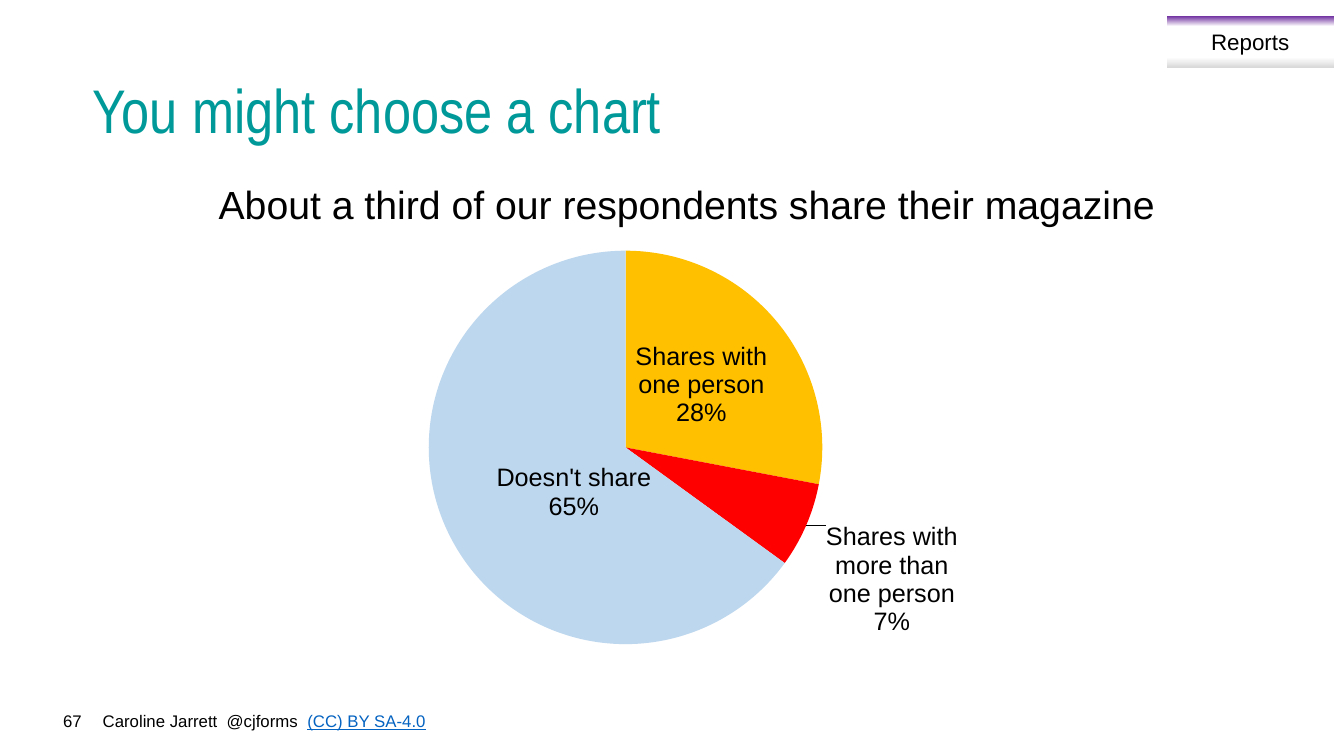
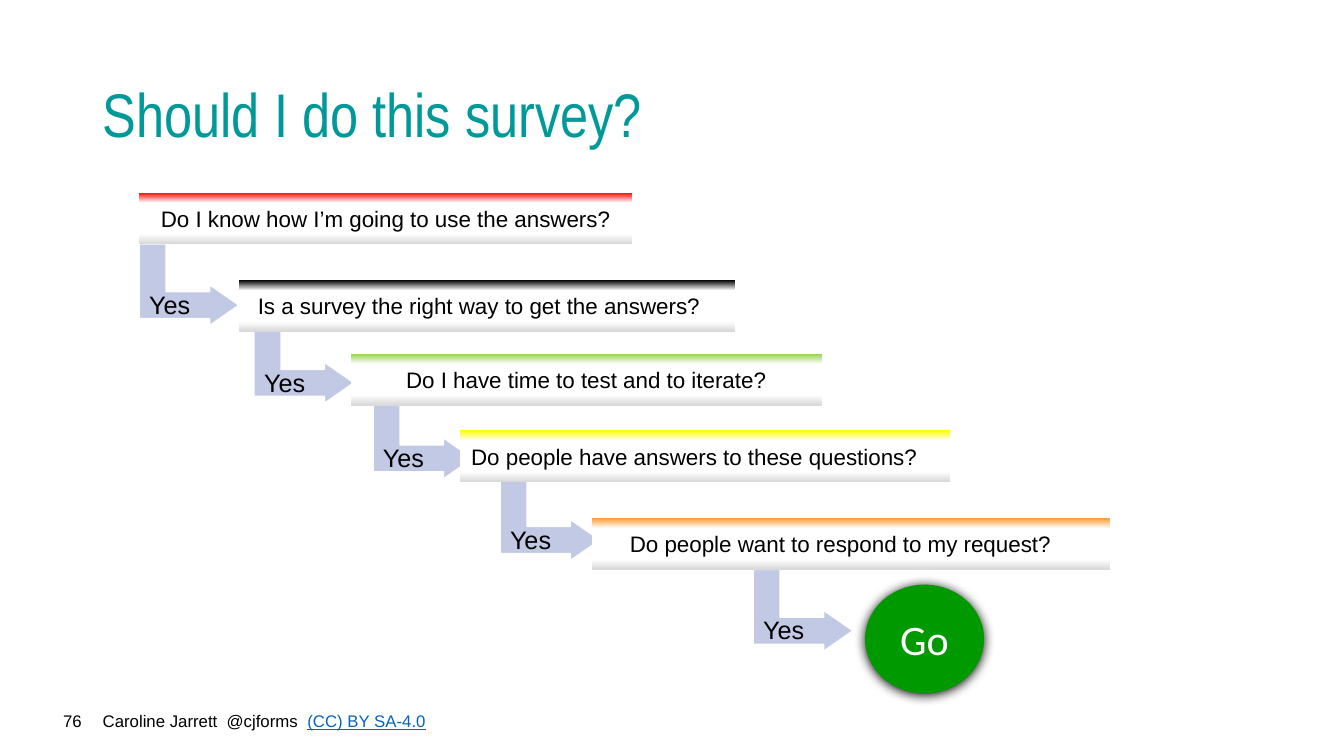
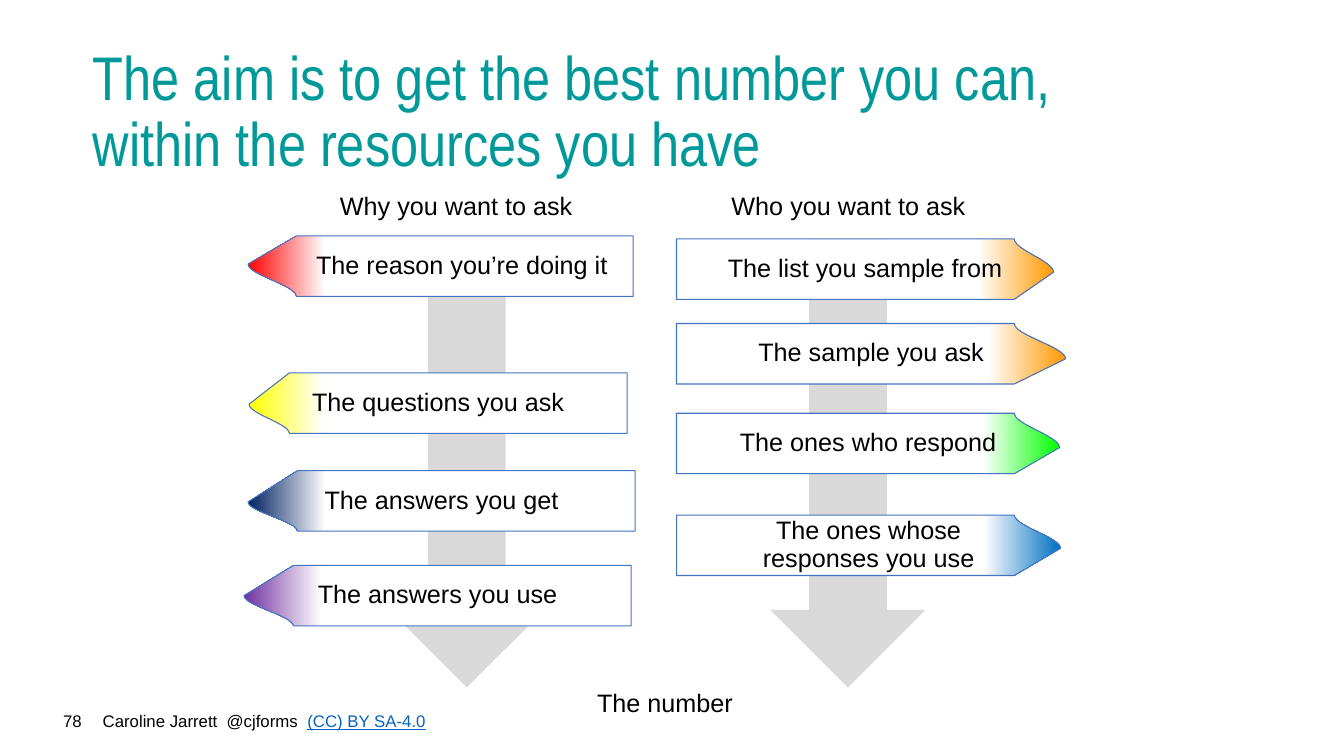
from lxml import etree
from pptx import Presentation
from pptx.chart.data import CategoryChartData
from pptx.dml.color import RGBColor
from pptx.enum.chart import XL_CHART_TYPE, XL_LABEL_POSITION
from pptx.enum.shapes import MSO_SHAPE
from pptx.enum.text import MSO_ANCHOR, MSO_AUTO_SIZE, PP_ALIGN
from pptx.oxml.ns import qn
from pptx.util import Inches, Pt

LEFT, CENTER, RIGHT = PP_ALIGN.LEFT, PP_ALIGN.CENTER, PP_ALIGN.RIGHT
TOP, MIDDLE = MSO_ANCHOR.TOP, MSO_ANCHOR.MIDDLE
RECTANGLE, ELLIPSE = MSO_SHAPE.RECTANGLE, MSO_SHAPE.OVAL
BENT_ARROW, DOWN_ARROW = MSO_SHAPE.BENT_UP_ARROW, MSO_SHAPE.DOWN_ARROW
LABEL_CENTER, LABEL_OUTSIDE = XL_LABEL_POSITION.CENTER, XL_LABEL_POSITION.OUTSIDE_END
PIE = XL_CHART_TYPE.PIE
NO_AUTOFIT = MSO_AUTO_SIZE.NONE


class Theme:
    body_font = "Arial"
    title_font = "Arial Narrow"
    button_font = "Calibri"
    title_size, button_size, subtitle_size = 44, 30, 28
    body_size, box_size, footer_size = 18, 16, 12
    text, title, link, white = "000000", "009999", "0563C1", "FFFFFF"
    step_arrow, down_arrow, box_edge = "C1C9E4", "D9D9D9", "D9D9D9"
    banner_line, button = "4472C4", "009900"
    purple, red, black, green = "7030A0", "FF0000", "000000", "92D050"
    yellow, orange, amber, lime = "FFFF00", "FF9933", "FF9900", "00FF00"
    navy, blue = "002060", "0070C0"
    slices = ("FFC000", "FF0000", "BDD7EE")


def write_text(shape, text, size=Theme.body_size, font=Theme.body_font, color=Theme.text,
               align=LEFT, anchor=TOP, spacing=1.0, wrap=True, margins=(0.1, 0.05, 0.1, 0.05)):
    frame = shape.text_frame
    frame.auto_size = NO_AUTOFIT
    frame.word_wrap = wrap
    frame.vertical_anchor = anchor
    frame.margin_left, frame.margin_top, frame.margin_right, frame.margin_bottom = map(Inches, margins)
    frame.text = text
    paragraph = frame.paragraphs[0]
    paragraph.alignment = align
    paragraph.line_spacing = spacing
    for run in paragraph.runs:
        run.font.size = Pt(size)
        run.font.name = font
        run.font.color.rgb = RGBColor.from_string(color)
    return paragraph


def paint(shape, color=None, stops=(), angle=0, line=None, line_width=1):
    shape.shadow.inherit = False
    if stops:
        shape.fill.gradient()
        shape.fill.gradient_angle = angle
        stop_list = shape._element.spPr.find(qn("a:gradFill")).find(qn("a:gsLst"))
        for stop in list(stop_list):
            stop_list.remove(stop)
        for percent, stop_color in stops:
            stop = etree.SubElement(stop_list, qn("a:gs"), pos=str(percent * 1000))
            etree.SubElement(stop, qn("a:srgbClr"), val=stop_color)
    else:
        shape.fill.solid()
        shape.fill.fore_color.rgb = RGBColor.from_string(color)
    if line:
        shape.line.color.rgb = RGBColor.from_string(line)
        shape.line.width = Pt(line_width)
    else:
        shape.line.fill.background()


presentation = Presentation()
presentation.slide_width = Inches(13.33)
presentation.slide_height = Inches(7.5)

pages = [
    ("67", "You might choose a chart", (0.82, 0.4, 11.6, 1.45)),
    ("76", "Should I do this survey?", (0.92, 0.44, 11.5, 1.45)),
    ("78", "The aim is to get the best number you can,\vwithin the resources you have",
     (0.82, 0.4, 11.6, 1.45)),
]
slides = []
for number, title_text, title_box in pages:
    slide = presentation.slides.add_slide(presentation.slide_layouts[5])
    title = slide.shapes.title
    title.left, title.top, title.width, title.height = map(Inches, title_box)
    write_text(title, title_text, size=Theme.title_size, font=Theme.title_font,
               color=Theme.title, anchor=MIDDLE, spacing=0.9)
    footer = slide.shapes.add_textbox(Inches(0.92), Inches(7), Inches(5.71), Inches(0.3))
    paragraph = write_text(footer, "Caroline Jarrett  @cjforms  ", size=Theme.footer_size)
    licence = paragraph.add_run()
    licence.text = "(CC) BY SA-4.0"
    licence.font.size = Pt(Theme.footer_size)
    licence.font.name = Theme.body_font
    licence.font.underline = True
    licence.font.color.rgb = RGBColor.from_string(Theme.link)
    page_number = slide.shapes.add_textbox(Inches(-0.25), Inches(7), Inches(1.16), Inches(0.3))
    write_text(page_number, number, size=Theme.footer_size, align=RIGHT)
    slides.append(slide)
chart_slide, steps_slide, aim_slide = slides

subtitle = chart_slide.shapes.add_textbox(Inches(2.07), Inches(1.74), Inches(9.81), Inches(0.57))
write_text(subtitle, "About a third of our respondents share their magazine", size=Theme.subtitle_size)

chart_data = CategoryChartData()
chart_data.categories = ["Shares with one other person", "Shares with more than one person",
                         "Doesn't share"]
chart_data.add_series("Series 1", (28, 7, 65))
chart = chart_slide.shapes.add_chart(PIE, Inches(2.88), Inches(1.93), Inches(7.15), Inches(5.07),
                                     chart_data).chart
chart.has_title = False
chart.has_legend = False
chart.font.size = Pt(Theme.body_size)
chart.font.name = Theme.body_font
chart.font.color.rgb = RGBColor.from_string(Theme.text)
points = chart.plots[0].series[0].points
label_positions = (LABEL_CENTER, LABEL_OUTSIDE, LABEL_CENTER)
for index, (color, position) in enumerate(zip(Theme.slices, label_positions)):
    point = points[index]
    point.format.fill.solid()
    point.format.fill.fore_color.rgb = RGBColor.from_string(color)
    label = point.data_label
    label_fonts = [label.font]
    if index == 0:
        label.text_frame.text = "Shares with one person\n28%"
        label_fonts = [run.font for paragraph in label.text_frame.paragraphs for run in paragraph.runs]
    for font in label_fonts:
        font.size = Pt(Theme.body_size)
        font.name = Theme.body_font
        font.color.rgb = RGBColor.from_string(Theme.text)
    label.position = position

for body in chart.element.xpath("//c:dLbl//a:bodyPr"):
    body.set("wrap", "square")
label_elements = chart.element.xpath("//c:dLbl")
for label_element in label_elements[1:]:
    for name, value in (("showVal", "0"), ("showCatName", "1"), ("showPercent", "1")):
        label_element.find(qn("c:" + name)).set("val", value)
    etree.SubElement(label_element, qn("c:separator")).text = "\n"

plot_area = chart.element.xpath("//c:plotArea")[0]
for old_layout in plot_area.findall(qn("c:layout")):
    plot_area.remove(old_layout)
layouts = [
    (plot_area, 0, [("layoutTarget", "inner"), ("xMode", "edge"), ("yMode", "edge"),
                    ("x", "0.19"), ("y", "0.11"), ("w", "0.55"), ("h", "0.77")]),
    (label_elements[1], 1, [("x", "0.02"), ("y", "-0.01")]),
    (label_elements[2], 1, [("x", "0.05"), ("y", "0")]),
]
for parent, position, settings in layouts:
    layout = etree.Element(qn("c:layout"))
    manual = etree.SubElement(layout, qn("c:manualLayout"))
    for name, value in settings:
        etree.SubElement(manual, qn("c:" + name), val=value)
    parent.insert(position, layout)

for left, top in ((5.05, 4.66), (3.79, 3.85), (1.47, 2.33), (2.61, 3.1), (7.56, 5.56)):
    arrow = steps_slide.shapes.add_shape(BENT_ARROW, Inches(left), Inches(top), Inches(0.81), Inches(0.99))
    arrow.rotation = 90
    for index, value in enumerate((0.33, 0.25, 0.36)):
        arrow.adjustments[index] = value
    paint(arrow, Theme.step_arrow, line=Theme.white)
    answer = steps_slide.shapes.add_textbox(Inches(left - 0.09), Inches(top + 0.49),
                                            Inches(0.61), Inches(0.4))
    write_text(answer, "Yes", wrap=False)

go_button = steps_slide.shapes.add_shape(ELLIPSE, Inches(8.58), Inches(5.8), Inches(1.18), Inches(1.08))
paint(go_button, Theme.button)
write_text(go_button, "Go", size=Theme.button_size, font=Theme.button_font, color=Theme.white,
           align=CENTER, anchor=MIDDLE)
effects = go_button._element.spPr.find(qn("a:effectLst"))
shadow = etree.SubElement(effects, qn("a:outerShdw"), blurRad=str(Pt(8.5)), dist=str(Pt(1)),
                          dir="5400000", algn="ctr", rotWithShape="0")
etree.SubElement(shadow, qn("a:srgbClr"), val=Theme.black)

boxes = [
    (chart_slide, "Reports", Theme.purple, 11.57, 0.16, 1.66, 0.05),
    (steps_slide, "Do I know how I’m going to use the answers?", Theme.red, 1.38, 1.91, 4.89, 0.05),
    (steps_slide, "Do people want to respond to my request?", Theme.orange, 5.87, 5.14, 5.14, 0.26),
    (steps_slide, "Do people have answers to these questions?", Theme.yellow, 4.56, 4.27, 4.86, 0.26),
    (steps_slide, "Do I have time to test and to iterate?", Theme.green, 3.48, 3.51, 4.67, 0.05),
    (steps_slide, "Is a survey the right way to get the answers?", Theme.black, 2.37, 2.78, 4.92, 0.21),
]
for slide, text, color, left, top, width, right_margin in boxes:
    box = slide.shapes.add_shape(RECTANGLE, Inches(left), Inches(top), Inches(width), Inches(0.51))
    paint(box, stops=((0, color), (20, Theme.white), (80, Theme.white), (100, Theme.box_edge)), angle=270)
    write_text(box, text, size=Theme.box_size, align=CENTER, anchor=MIDDLE,
               margins=(0.05, 0.04, right_margin, 0.04))

banner_margins = (0.03, 0.03, 0.03, 0.03)
for text, left, top, width, height in (
    ("Why you want to ask", 2.79, 1.77, 3.47, 0.57),
    ("Who you want to ask", 7.16, 1.77, 2.51, 0.57),
    ("The number", 5.34, 6.69, 2.51, 0.6),
):
    caption = aim_slide.shapes.add_textbox(Inches(left), Inches(top), Inches(width), Inches(height))
    write_text(caption, text, align=CENTER, anchor=MIDDLE, spacing=0.9, margins=banner_margins)

for left in (3.86, 7.64):
    arrow = aim_slide.shapes.add_shape(DOWN_ARROW, Inches(left), Inches(2.37), Inches(1.54), Inches(4.45))
    paint(arrow, Theme.down_arrow)

banner_height = 0.6
curve_steps = 12
banners = [
    ("The reason you’re doing it", Theme.red, 6.28, 2.94, 2.46, 2.34, 2.62, 0.45),
    ("The questions you ask", Theme.yellow, 6.22, 2.87, 2.47, 3.7, 4.01, 0.03),
    ("The answers you get", Theme.navy, 6.3, 2.95, 2.46, 4.67, 4.98, 0.03),
    ("The answers you use", Theme.purple, 6.26, 2.91, 2.42, 5.61, 5.91, 0.03),
    ("The list you sample from", Theme.amber, 6.71, 10.06, 10.45, 2.37, 2.7, 0.03),
    ("The sample you ask", Theme.amber, 6.71, 10.06, 10.57, 3.21, 3.56, 0.03),
    ("The ones who respond", Theme.lime, 6.71, 10.06, 10.51, 4.1, 4.44, 0.03),
    ("The ones whose\vresponses you use", Theme.blue, 6.71, 10.06, 10.52, 5.11, 5.44, 0.03),
]
for text, color, flat_x, shoulder_x, tip_x, top, tip_y, left_margin in banners:
    points_left = tip_x < flat_x
    straight_y, curve_y = (top, top + banner_height) if points_left else (top + banner_height, top)
    outline = [(shoulder_x, straight_y), (flat_x, straight_y), (flat_x, curve_y), (shoulder_x, curve_y)]
    for step in range(1, curve_steps + 1):
        share = step / curve_steps
        ease = share * share * (3 - 2 * share)
        outline.append((shoulder_x + (tip_x - shoulder_x) * ease, curve_y + (tip_y - curve_y) * share))
    corners = [(Inches(x), Inches(y)) for x, y in outline]
    builder = aim_slide.shapes.build_freeform(*corners[0])
    builder.add_line_segments(corners[1:], close=True)
    banner = builder.convert_to_shape()
    paint(banner, stops=((0, color), (20, Theme.white), (100, Theme.white)),
          angle=0 if points_left else 180, line=Theme.banner_line, line_width=0.75)
    write_text(banner, text, align=CENTER, anchor=MIDDLE, spacing=0.9,
               margins=(left_margin, 0.03, 0.03, 0.03))

presentation.save("out.pptx")
